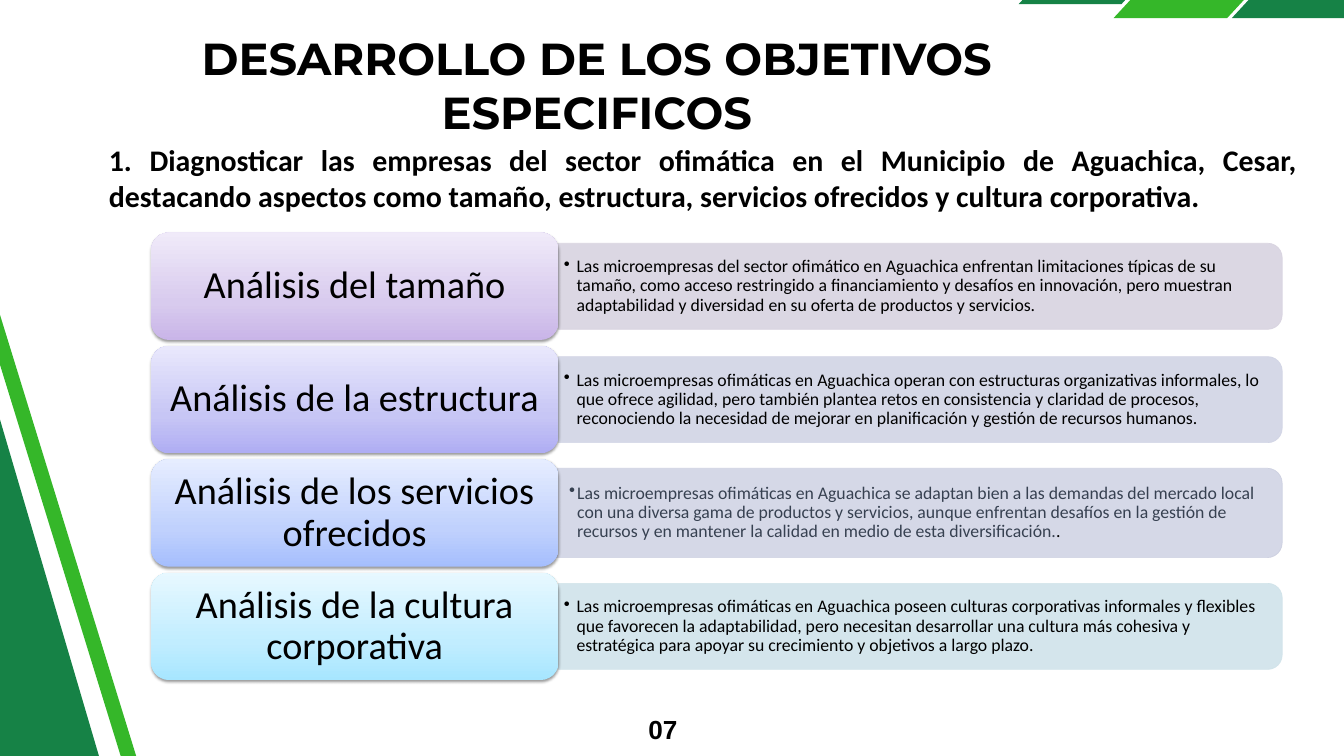
"""Builds the slide on the development of the specific objectives."""
from copy import deepcopy
from dataclasses import dataclass

from lxml import etree
from pptx import Presentation
from pptx.dml.color import RGBColor
from pptx.enum.shapes import MSO_SHAPE
from pptx.enum.text import MSO_ANCHOR, MSO_AUTO_SIZE, PP_ALIGN
from pptx.oxml.ns import qn
from pptx.util import Inches, Pt

CENTER, RIGHT, JUSTIFY = PP_ALIGN.CENTER, PP_ALIGN.RIGHT, PP_ALIGN.JUSTIFY
TOP, MIDDLE = MSO_ANCHOR.TOP, MSO_ANCHOR.MIDDLE
ROUNDED, ROUNDED_END = MSO_SHAPE.ROUNDED_RECTANGLE, MSO_SHAPE.ROUND_2_SAME_RECTANGLE
NO_FIT = MSO_AUTO_SIZE.NONE


@dataclass(frozen=True)
class Theme:
    ink: str = "000000"
    gray: str = "374151"
    dark: str = "168246"
    light: str = "35B729"
    title_font: str = "Montserrat"
    body_font: str = "Calibri"
    number_font: str = "Arial"
    title: int = 48
    label: int = 41
    lead: int = 32
    number: int = 28
    detail: int = 19


T = Theme()
WIDTH, HEIGHT = 20, 11.25
TITLE = "DESARROLLO DE LOS OBJETIVOS ESPECIFICOS"
OBJECTIVE = ("1. Diagnosticar las empresas del sector ofimática en el Municipio de Aguachica, Cesar, "
             "destacando aspectos como tamaño, estructura, servicios ofrecidos y cultura corporativa.")
PAGE = "07"

PLAIN = dict(size=(10.77, 1.28), left=8.31, width=10.71, inset=(0.08, 0.04), indent=0.19, color=T.ink)
LOOSE = dict(size=(10.83, 1.33), left=8.42, width=10.5, inset=(0.05, 0.03), indent=0.12, color=T.gray)
ROWS = [
    ("Análisis del tamaño",
     ["Las microempresas del sector ofimático en Aguachica enfrentan limitaciones típicas de su tamaño, "
      "como acceso restringido a financiamiento y desafíos en innovación, pero muestran adaptabilidad y "
      "diversidad en su oferta de productos y servicios."],
     ("C9B5E8", "D8CBEE", "F0EAF9"), "D8D3E0", PLAIN),
    ("Análisis de la estructura",
     ["Las microempresas ofimáticas en Aguachica operan con estructuras organizativas informales, lo que "
      "ofrece agilidad, pero también plantea retos en consistencia y claridad de procesos, reconociendo la "
      "necesidad de mejorar en planificación y gestión de recursos humanos."],
     ("AFADF3", "C7C6F5", "E9E8FC"), "D1D4E5", PLAIN),
    ("Análisis de los servicios ofrecidos",
     ["Las microempresas ofimáticas en Aguachica se adaptan bien a las demandas del mercado local con una "
      "diversa gama de productos y servicios, aunque enfrentan desafíos en la gestión de recursos y en "
      "mantener la calidad en medio de esta diversificación.", "."],
     ("A5BEFD", "C0D1FD", "E6EDFF"), "CCCFE0", LOOSE),
    ("Análisis de la cultura corporativa",
     ["Las microempresas ofimáticas en Aguachica poseen culturas corporativas informales y flexibles que "
      "favorecen la adaptabilidad, pero necesitan desarrollar una cultura más cohesiva y estratégica para "
      "apoyar su crecimiento y objetivos a largo plazo."],
     ("A7E6FF", "C1EDFF", "E7F8FF"), "D0E3EA", PLAIN),
]
STOPS = (0, 0.35, 1)
FIRST_CENTER, PITCH = 4.26, 1.687
CARD_LEFT, CARD_W, CARD_H = 2.25, 6.06, 1.6
PANEL_RIGHT = 19.08

BANDS = [
    (T.dark, [(16.01, -0.86), (17.53, -0.86), (16.69, 0.06), (15.16, 0.06)]),
    (T.light, [(17.8, -1.06), (19.49, -1.06), (18.26, 0.27), (16.57, 0.27)]),
    (T.dark, [(19.56, -1.06), (21.25, -1.06), (20.02, 0.27), (18.33, 0.27)]),
    (T.dark, [(-1.97, 17.32), (-6.6, 1.57), (-1.79, 0.16), (2.84, 15.9)]),
    (T.light, [(3.44, 16.58), (-1.4, 0.89), (-1.19, 0.83), (3.65, 16.51)]),
]


def rgb(color):
    return RGBColor.from_string(color)


def place(sp, left, top, width, height):
    sp.left, sp.top, sp.width, sp.height = map(Inches, (left, top, width, height))


def frame(sp, inset=(0, 0), anchor=TOP):
    tf = sp.text_frame
    tf.word_wrap, tf.auto_size, tf.vertical_anchor = True, NO_FIT, anchor
    tf.margin_left = tf.margin_right = Inches(inset[0])
    tf.margin_top = tf.margin_bottom = Inches(inset[1])
    return tf


def style(font, name, size, color=T.ink, bold=False):
    font.name, font.size, font.bold = name, Pt(size), bold
    font.color.rgb = rgb(color)


def write(tf, text, align, name, size, bold=False, spacing=1.0):
    tf.text = text
    p = tf.paragraphs[0]
    p.alignment, p.line_spacing = align, spacing
    p.space_before = p.space_after = Pt(0)
    style(p.runs[0].font, name, size, bold=bold)
    return p


def add_band(s, color, points):
    corners = [(Inches(x), Inches(y)) for x, y in points]
    builder = s.shapes.build_freeform(*corners[0], scale=1.0)
    builder.add_line_segments(corners[1:], close=True)
    sp = builder.convert_to_shape()
    sp.shadow.inherit = False
    sp.fill.solid()
    sp.fill.fore_color.rgb = rgb(color)
    sp.line.fill.background()


def add_panel(s, center, color, layout):
    length, height = layout["size"]
    middle = PANEL_RIGHT - length / 2
    sp = s.shapes.add_shape(ROUNDED_END, Inches(middle - height / 2), Inches(center - length / 2),
                            Inches(height), Inches(length))
    sp.rotation = 90
    sp.shadow.inherit = False
    sp.fill.solid()
    sp.line.fill.solid()
    sp.line.width = Pt(0.75)
    sp.fill.fore_color.rgb = sp.line.color.rgb = rgb(color if layout is PLAIN else "D1D4E5")
    sp.line.color.rgb = rgb(color)
    for clr in sp._element.spPr.iter(qn("a:srgbClr")):
        etree.SubElement(clr, qn("a:alpha"), val="90000")


def add_detail(s, center, parts, layout):
    height = 1.16
    sp = s.shapes.add_textbox(0, 0, 0, 0)
    place(sp, layout["left"], center - height / 2, layout["width"], height)
    p = frame(sp, layout["inset"], MIDDLE).paragraphs[0]
    pPr = p._p.get_or_add_pPr()
    pPr.set("marL", str(Inches(layout["indent"])))
    pPr.set("indent", str(-Inches(layout["indent"])))
    etree.SubElement(pPr, qn("a:buChar"), char="•")
    p.line_spacing = 0.9
    for part, color in zip(parts, (layout["color"], T.ink)):
        r = p.add_run()
        r.text = part
        style(r.font, T.body_font, T.detail, color)


def add_card(s, center, label, colors):
    sp = s.shapes.add_shape(ROUNDED, Inches(CARD_LEFT), Inches(center - CARD_H / 2),
                            Inches(CARD_W), Inches(CARD_H))
    sp.fill.gradient()
    sp.fill.gradient_angle = 90
    stops = sp._element.spPr.find(".//" + qn("a:gsLst"))
    stops.append(deepcopy(stops[0]))
    for stop, position, color in zip(sp.fill.gradient_stops, STOPS, colors):
        stop.position, stop.color.rgb = position, rgb(color)
    sp.line.fill.background()
    sp.shadow.inherit = False
    effects = sp._element.spPr.find(qn("a:effectLst"))
    shadow = etree.SubElement(effects, qn("a:outerShdw"), blurRad=str(Pt(3.1)), dist=str(Pt(1.6)),
                              dir="5400000", rotWithShape="0")
    clr = etree.SubElement(shadow, qn("a:srgbClr"), val=T.ink)
    etree.SubElement(clr, qn("a:alpha"), val="38000")
    write(frame(sp, (0.17, 0.09), MIDDLE), label, CENTER, T.body_font, T.label, spacing=0.9)


def main():
    prs = Presentation()
    prs.slide_width, prs.slide_height = Inches(WIDTH), Inches(HEIGHT)
    s = prs.slides.add_slide(prs.slide_layouts[1])
    for color, points in BANDS:
        add_band(s, color, points)

    title, body = s.placeholders
    place(title, 1.92, 0.46, 13.92, 1.62)
    write(frame(title), TITLE, CENTER, T.title_font, T.title, True)
    place(body, 1.52, 2.06, 17.9, 1.18)
    p = write(frame(body, (0.1, 0.05)), OBJECTIVE, JUSTIFY, T.body_font, T.lead, True)
    pPr = p._p.get_or_add_pPr()
    pPr.set("marL", "0")
    pPr.set("indent", "0")
    etree.SubElement(pPr, qn("a:buNone"))

    for i, (label, parts, colors, panel, layout) in enumerate(ROWS):
        center = FIRST_CENTER + i * PITCH
        add_panel(s, center, panel, layout)
        add_detail(s, center, parts, layout)
        add_card(s, center, label, colors)

    number = s.shapes.add_textbox(0, 0, 0, 0)
    place(number, 9.52, 10.54, 0.56, 0.5)
    write(frame(number), PAGE, RIGHT, T.number_font, T.number, True, Pt(39.2))
    prs.save("out.pptx")


if __name__ == "__main__":
    main()
